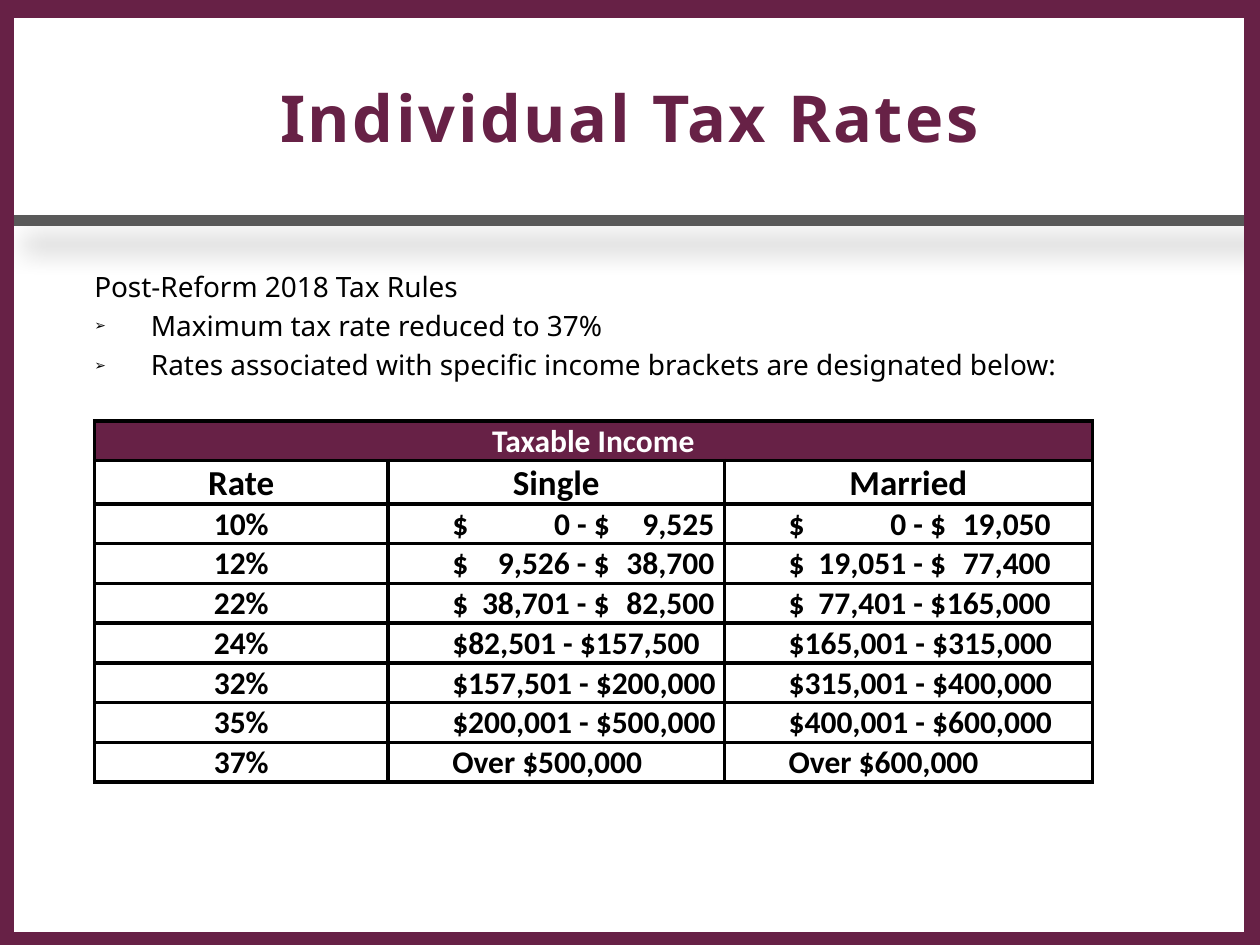
from pptx import Presentation
from pptx.dml.color import RGBColor
from pptx.enum.shapes import MSO_CONNECTOR, MSO_SHAPE
from pptx.enum.text import MSO_ANCHOR, PP_ALIGN
from pptx.oxml import parse_xml
from pptx.oxml.ns import nsdecls
from pptx.util import Inches, Pt

PLUM = RGBColor(0x67, 0x21, 0x46)
GRAY = RGBColor(0x59, 0x59, 0x59)
BLACK = RGBColor(0, 0, 0)
WHITE = RGBColor(255, 255, 255)
HEAD_FONT, TABLE_FONT = "Noto Sans", "Calibri"

INTRO = "Post-Reform 2018 Tax Rules"
POINTS = [
    "Maximum tax rate reduced to 37%",
    "Rates associated with specific income brackets are designated below:",
]
COLUMNS = [("Rate", 2.33), ("Single", 2.67), ("Married", 2.92)]
# Right tabs line up the second dollar sign and the closing amount
BRACKETS = [
    ("10%", "$\t0 - $\t9,525", "$\t0 - $\t19,050"),
    ("12%", "$\t9,526 - $\t38,700", "$\t19,051 - $\t77,400"),
    ("22%", "$\t38,701 - $\t82,500", "$\t77,401 - $\t165,000"),
    ("24%", "$\t82,501 - $157,500", "$165,001 - $315,000"),
    ("32%", "$157,501 - $200,000", "$315,001 - $400,000"),
    ("35%", "$200,001 - $500,000", "$400,001 - $600,000"),
    ("37%", "Over $500,000", "Over $600,000"),
]
AMOUNT_TABS = (1.25, 2.08)


def xml(tag, attrs="", inner=""):
    return parse_xml(f'<a:{tag} {nsdecls("a")} {attrs}>{inner}</a:{tag}>')


def style_runs(p, font, size, color, bold=False):
    for r in p.runs:
        r.font.name, r.font.size, r.font.bold = font, Pt(size), bold
        r.font.color.rgb = color


def add_text_frame(s, x, y, w, h):
    tf = s.shapes.add_textbox(Inches(x), Inches(y), Inches(w), Inches(h)).text_frame
    tf.word_wrap = True
    return tf


def add_title(s, x, y, w, h):
    tf = add_text_frame(s, x, y, w, h)
    tf.vertical_anchor = MSO_ANCHOR.MIDDLE
    p = tf.paragraphs[0]
    p.text = "Individual Tax Rates"
    p.alignment = PP_ALIGN.CENTER
    style_runs(p, HEAD_FONT, 37, PLUM, True)
    p.runs[0].font._element.set("spc", "150")


def add_rules_text(s, x, y, w, h):
    tf = add_text_frame(s, x, y, w, h)
    for i, text in enumerate([INTRO] + POINTS):
        p = tf.paragraphs[0] if i == 0 else tf.add_paragraph()
        p.text = text
        p.space_before = Pt(3.2 if i else 0)
        style_runs(p, HEAD_FONT, 16, BLACK)
        pPr = p._p.get_or_add_pPr()
        pPr.set("marL", str(Inches(0.6 if i else 0.15)))
        pPr.set("indent", str(Inches(-0.45 if i else 0)))
        if i:
            pPr.append(xml("buSzPct", 'val="50000"'))
            pPr.append(xml("buFont", f'typeface="{HEAD_FONT}"'))
            pPr.append(xml("buChar", 'char="➢"'))


def set_cell(cell, text, size, color, fill=None, amount=False):
    cell.text = text
    cell.vertical_anchor = MSO_ANCHOR.BOTTOM
    cell.margin_left = Inches(0.51 if amount else 0.01)
    cell.margin_right = cell.margin_top = Inches(0.01)
    cell.margin_bottom = 0
    p = cell.text_frame.paragraphs[0]
    p.alignment = PP_ALIGN.LEFT if amount else PP_ALIGN.CENTER
    style_runs(p, TABLE_FONT, size, color, True)
    if "\t" in text:
        tabs = "".join(f'<a:tab pos="{Inches(t)}" algn="r"/>' for t in AMOUNT_TABS)
        p._p.get_or_add_pPr().append(xml("tabLst", inner=tabs))
    if fill is None:
        cell.fill.background()
    else:
        cell.fill.solid()
        cell.fill.fore_color.rgb = fill


def add_borders(cell):
    tcPr = cell._tc.get_or_add_tcPr()
    line = f'<a:solidFill><a:srgbClr val="{BLACK}"/></a:solidFill>'
    for side in ("lnL", "lnR", "lnT", "lnB"):
        tcPr.append(xml(side, f'w="{Pt(2.25)}"', line))


def add_rate_table(s, x, y, w, h):
    tbl = s.shapes.add_table(len(BRACKETS) + 2, len(COLUMNS), Inches(x), Inches(y),
                             Inches(w), Inches(h)).table
    tbl.first_row = tbl.horz_banding = False
    for col, (_, width) in zip(tbl.columns, COLUMNS):
        col.width = Inches(width)
    for cell in tbl.iter_cells():
        add_borders(cell)

    # Heading rows
    tbl.cell(0, 0).merge(tbl.cell(0, len(COLUMNS) - 1))
    set_cell(tbl.cell(0, 0), "Taxable Income", 18, WHITE, PLUM)
    for c, (name, _) in enumerate(COLUMNS):
        set_cell(tbl.cell(1, c), name, 20, BLACK, WHITE)

    # Bracket rows
    for r, row in enumerate(BRACKETS, 2):
        for c, text in enumerate(row):
            set_cell(tbl.cell(r, c), text, 18, BLACK, amount=c > 0)


def add_divider(s, x, y, w):
    line = s.shapes.add_connector(MSO_CONNECTOR.STRAIGHT, Inches(x), Inches(y),
                                  Inches(x + w), Inches(y))
    line.line.color.rgb = GRAY
    line.line.width = Pt(6)
    shadow = (f'<a:outerShdw blurRad="{Pt(15)}" dist="{Pt(18)}" dir="2700000" '
              f'algn="tl" rotWithShape="0"><a:srgbClr val="{BLACK}">'
              '<a:alpha val="26000"/></a:srgbClr></a:outerShdw>')
    line._element.spPr.append(xml("effectLst", inner=shadow))


def add_frame(s, x, y, w, h):
    sp = s.shapes.add_shape(MSO_SHAPE.RECTANGLE, Inches(x), Inches(y),
                            Inches(w), Inches(h))
    sp.shadow.inherit = False
    sp.fill.background()
    sp.line.color.rgb = PLUM
    sp.line.width = Pt(10)
    # Square corners
    sp.line._get_or_add_ln().append(xml("miter", 'lim="800000"'))


def main():
    prs = Presentation()
    prs.slide_width, prs.slide_height = Inches(10), Inches(7.5)
    s = prs.slides.add_slide(prs.slide_layouts[6])
    add_title(s, 0.5, 0.3, 9, 1.25)
    add_rules_text(s, 0.5, 2.09, 9, 1)
    add_rate_table(s, 0.75, 3.34, 7.92, 2.84)
    add_divider(s, 0, 1.75, 10)
    add_frame(s, 0.04, 0.07, 9.9, 7.4)
    prs.save("out.pptx")


if __name__ == "__main__":
    main()
